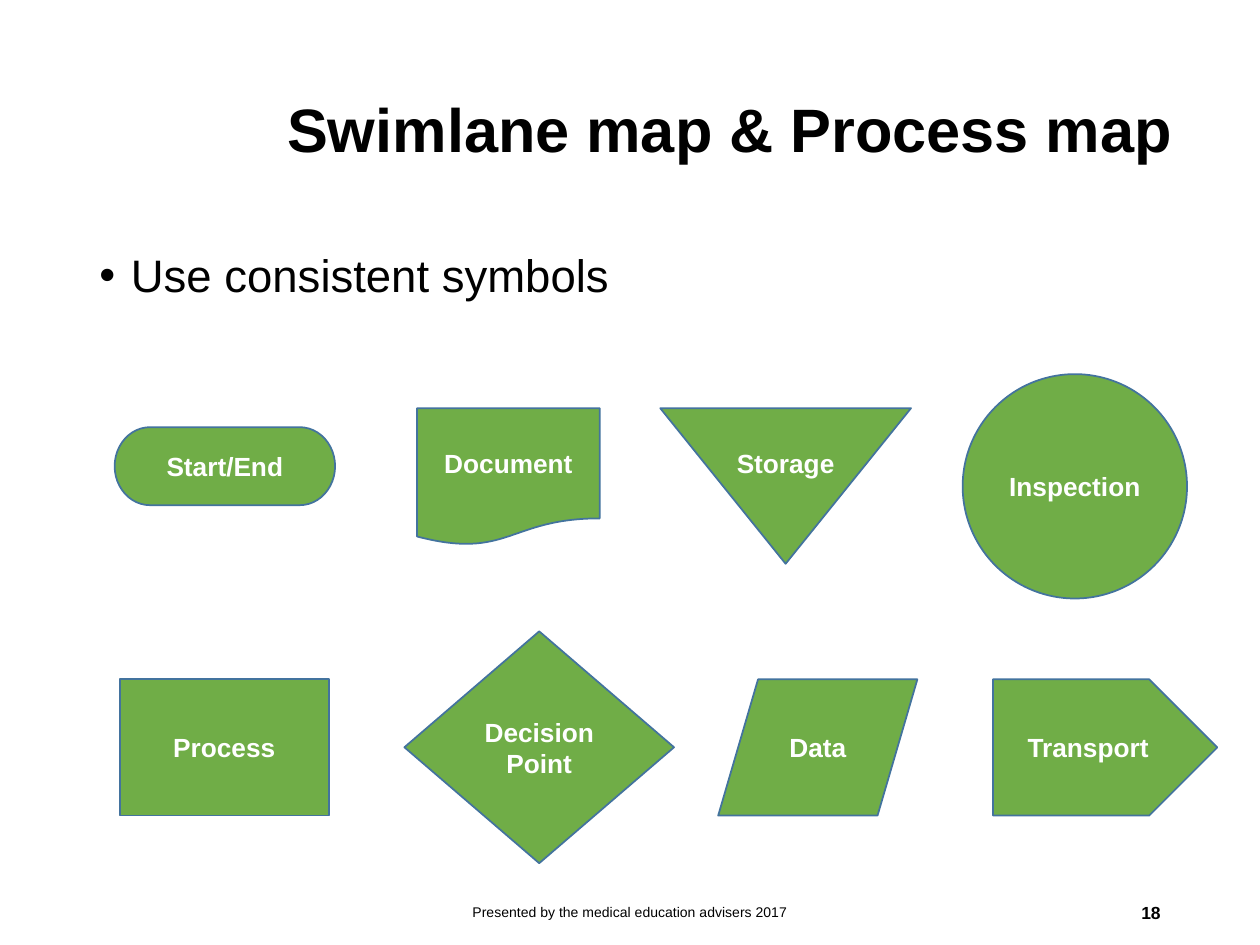
from collections import namedtuple
from dataclasses import dataclass

from lxml import etree
from pptx import Presentation
from pptx.dml.color import RGBColor
from pptx.enum.shapes import MSO_SHAPE as Kind
from pptx.enum.text import MSO_ANCHOR as Anchor, PP_ALIGN as Align
from pptx.oxml.ns import qn
from pptx.util import Pt

Box = namedtuple("Box", "left top width height")
Symbol = namedtuple("Symbol", "kind label left top width height drop", defaults=[0])


@dataclass(frozen=True)
class Theme:
    font: str = "Arial"
    ink: RGBColor = RGBColor(0, 0, 0)
    label: RGBColor = RGBColor(255, 255, 255)
    fill: RGBColor = RGBColor(0x70, 0xAD, 0x47)
    outline: RGBColor = RGBColor(0x43, 0x73, 0x9E)
    title_size: int = 35
    body_size: int = 26
    symbol_size: int = 15
    number_size: int = 10
    footer_size: int = 8


THEME = Theme()

SYMBOLS = [
    Symbol(Kind.FLOWCHART_TERMINATOR, "Start/End", 0, 30.3, 126, 44.6),
    Symbol(Kind.FLOWCHART_DOCUMENT, "Document", 172.8, 19.5, 104.4, 78.5),
    Symbol(Kind.FLOWCHART_MERGE, "Storage", 311.8, 19.5, 143.3, 88.9, 18),
    Symbol(Kind.OVAL, "Inspection", 484.6, 0, 128.2, 128.2),
    Symbol(Kind.RECTANGLE, "Process", 2.9, 174.4, 119.5, 77.8),
    Symbol(Kind.FLOWCHART_DECISION, "Decision Point", 165.6, 147, 154.1, 132.5),
    Symbol(Kind.FLOWCHART_DATA, "Data", 344.9, 174.4, 113.8, 77.8),
    Symbol(Kind.PENTAGON, "Transport", 501.9, 174.4, 128.2, 77.8),
]


def write(para, text, size, color, bold=False):
    span = para.add_run()
    span.text = text
    span.font.name = THEME.font
    span.font.size = Pt(size)
    span.font.color.rgb = color
    span.font.bold = bold


def add_line(page, box, text, size, align=Align.LEFT, anchor=Anchor.MIDDLE, bold=False):
    frame = page.shapes.add_textbox(*map(Pt, box)).text_frame
    frame.word_wrap = True
    frame.vertical_anchor = anchor
    para = frame.paragraphs[0]
    para.alignment = align
    write(para, text, size, THEME.ink, bold)
    return para


def add_title(page, box):
    para = add_line(page, box, "Swimlane map & Process map", THEME.title_size, bold=True)
    para.line_spacing = 0.9


def add_body(page, box):
    para = add_line(page, box, "Use consistent symbols", THEME.body_size, anchor=Anchor.TOP)
    properties = para._p.get_or_add_pPr()
    properties.set("marL", str(Pt(18)))
    properties.set("indent", str(Pt(-18)))
    etree.SubElement(properties, qn("a:buFont")).set("typeface", THEME.font)
    etree.SubElement(properties, qn("a:buChar")).set("char", "•")
    para.line_spacing = 0.9


def add_symbols(page, box):
    for symbol in SYMBOLS:
        shape = page.shapes.add_shape(
            symbol.kind,
            Pt(box.left + symbol.left), Pt(box.top + symbol.top),
            Pt(symbol.width), Pt(symbol.height),
        )
        shape.shadow.inherit = False
        shape.fill.solid()
        shape.fill.fore_color.rgb = THEME.fill
        shape.line.color.rgb = THEME.outline
        shape.line.width = Pt(1)
        frame = shape.text_frame
        frame.word_wrap = True
        frame.vertical_anchor = Anchor.MIDDLE
        frame.margin_left = frame.margin_right = Pt(3.6)
        frame.margin_top = Pt(3.6 + symbol.drop)
        para = frame.paragraphs[0]
        para.alignment = Align.CENTER
        write(para, symbol.label, THEME.symbol_size, THEME.label, bold=True)


def add_footer(page, box):
    credit = Box(box.left, box.top, 243.4, box.height)
    number = Box(box.left + box.width - 162, box.top, 162, box.height)
    add_line(page, credit, "Presented by the medical education advisers 2017",
             THEME.footer_size, Align.CENTER)
    add_line(page, number, "18", THEME.number_size, Align.RIGHT, bold=True)


def main():
    deck = Presentation()
    deck.slide_width, deck.slide_height = Pt(720), Pt(540)
    page = deck.slides.add_slide(deck.slide_layouts[6])
    add_title(page, Box(157, 15.8, 563, 120.2))
    add_body(page, Box(49.7, 141.1, 620.6, 349.2))
    add_symbols(page, Box(65.5, 213.8, 630.1, 279.5))
    add_footer(page, Box(238.3, 506.9, 432, 28.8))
    deck.save("out.pptx")


if __name__ == "__main__":
    main()
